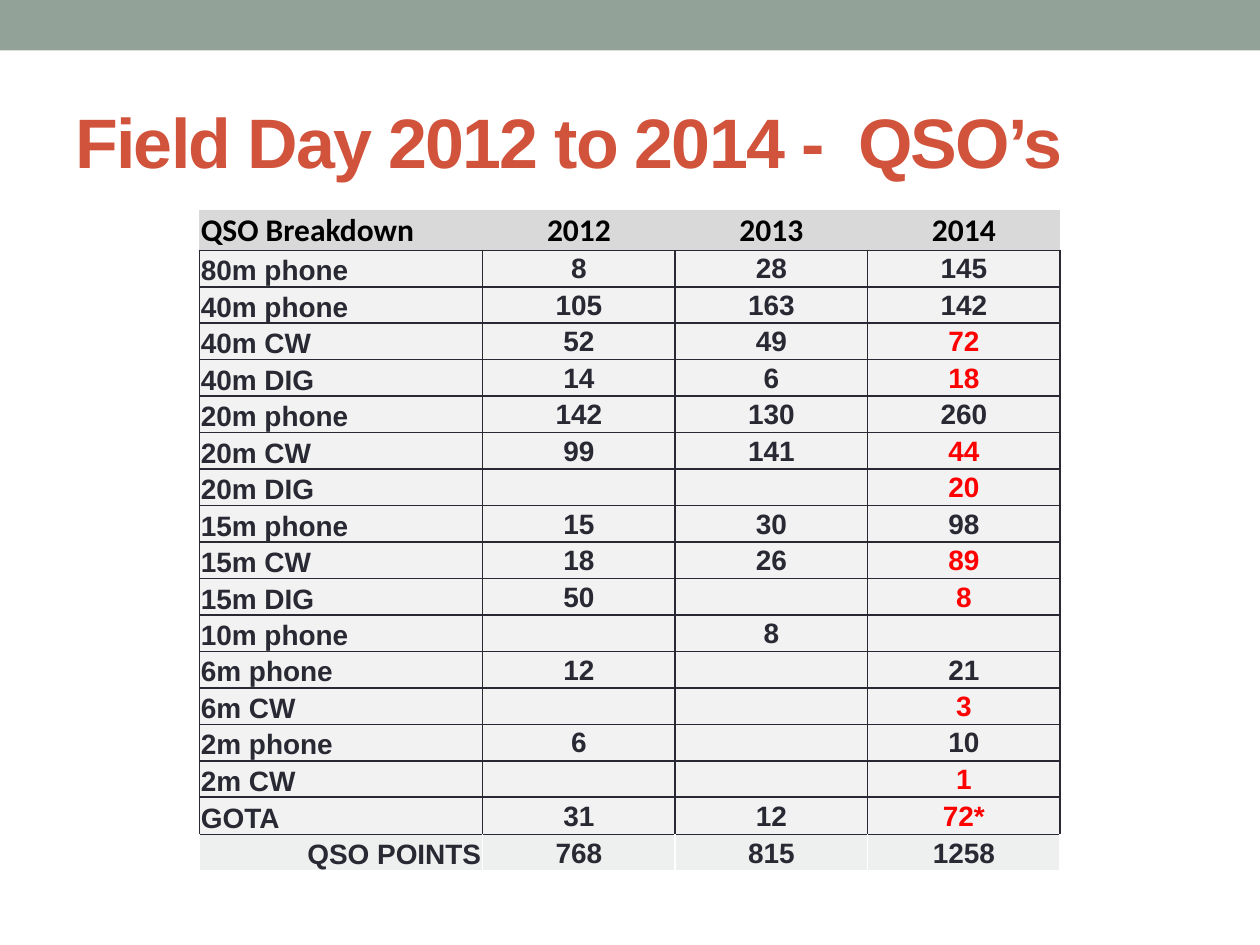
from lxml import etree
from pptx import Presentation
from pptx import util as u
from pptx.dml.color import RGBColor
from pptx.enum import shapes, text
from pptx.oxml.ns import qn

DARK, RED, WHITE = "292934", "FF0000", "FFFFFF"
HEADER = ["QSO Breakdown", "2012", "2013", "2014"]
BANDS = [
    ["80m phone", "8", "28", "145"],
    ["40m phone", "105", "163", "142"],
    ["40m CW", "52", "49", "72"],
    ["40m DIG", "14", "6", "18"],
    ["20m phone", "142", "130", "260"],
    ["20m CW", "99", "141", "44"],
    ["20m DIG", "", "", "20"],
    ["15m phone", "15", "30", "98"],
    ["15m CW", "18", "26", "89"],
    ["15m DIG", "50", "", "8"],
    ["10m phone", "", "8", ""],
    ["6m phone", "12", "", "21"],
    ["6m CW", "", "", "3"],
    ["2m phone", "6", "", "10"],
    ["2m CW", "", "", "1"],
    ["GOTA", "31", "12", "72*"],
]
TOTAL = ["QSO POINTS", "768", "815", "1258"]


def rgb(color):
    return RGBColor.from_string(color)


def add_run(p, words, size, color, name="Arial"):
    r = p.add_run()
    r.text = words
    r.font.size = u.Pt(size)
    r.font.bold = True
    r.font.name = name
    r.font.color.rgb = rgb(color)
    return r


def add_bar(s, width):
    sp = s.shapes.add_shape(shapes.MSO_SHAPE.RECTANGLE, 0, 0, width, u.Cm(1.02))
    sp.shadow.inherit = False
    sp.fill.solid()
    sp.fill.fore_color.rgb = rgb("93A299")
    sp.line.fill.background()


def add_title(s, words):
    sp = s.shapes.add_textbox(u.Cm(1.27), u.Cm(1.47), u.Cm(22.86), u.Cm(2.74))
    tf = sp.text_frame
    tf.word_wrap = True
    tf.vertical_anchor = text.MSO_ANCHOR.MIDDLE
    r = add_run(tf.paragraphs[0], words, 40, "D2533C")
    r.font._element.set("spc", "-100")


def set_borders(cell, colors):
    tc_pr = cell._tc.get_or_add_tcPr()
    for side, color in zip("LRTB", colors):
        ln = etree.SubElement(tc_pr, qn(f"a:ln{side}"), w=str(u.Pt(1)))
        if color:
            fill = etree.SubElement(ln, qn("a:solidFill"))
            etree.SubElement(fill, qn("a:srgbClr"), val=color)
        else:
            etree.SubElement(ln, qn("a:noFill"))


def fill_cell(cell, words, fill, borders, align, anchor, size, color, name="Arial"):
    set_borders(cell, borders)
    cell.fill.solid()
    cell.fill.fore_color.rgb = rgb(fill)
    cell.margin_left = cell.margin_right = cell.margin_top = u.Cm(0.03)
    cell.margin_bottom = 0
    cell.vertical_anchor = anchor
    p = cell.text_frame.paragraphs[0]
    p.alignment = align
    if words:
        add_run(p, words, size, color, name)
    else:
        etree.SubElement(p._p, qn("a:endParaRPr"), sz=str(size * 100))


def add_qso_table(s):
    rows = [HEADER, *BANDS, TOTAL]
    widths = [5.71, 3.88, 3.88, 3.88]
    heights = [0.8] + [0.735] * 15 + [0.75, 0.735]
    frame = s.shapes.add_table(len(rows), len(widths), u.Cm(4.02), u.Cm(4.24),
                               u.Cm(sum(widths)), u.Cm(sum(heights)))
    table = frame.table
    table.first_row = table.horz_banding = False
    for column, width in zip(table.columns, widths):
        column.width = u.Cm(width)
    for row, height in zip(table.rows, heights):
        row.height = u.Cm(height)

    last = len(rows) - 1
    for i, values in enumerate(rows):
        for j, words in enumerate(values):
            align = text.PP_ALIGN.CENTER if j else text.PP_ALIGN.LEFT
            anchor = text.MSO_ANCHOR.MIDDLE if j else text.MSO_ANCHOR.BOTTOM
            cell = table.cell(i, j)
            if i == 0:
                fill_cell(cell, words, "D9D9D9", [None, None, None, DARK], align,
                          text.MSO_ANCHOR.BOTTOM, 18, "000000", "Calibri")
            elif i == last:
                fill_cell(cell, words, "EEF0EF", [WHITE, WHITE, DARK, WHITE],
                          align if j else text.PP_ALIGN.RIGHT, anchor, 16, DARK)
            else:
                is_red = j == 3 and not values[0].endswith("phone")
                fill_cell(cell, words, "F2F2F2", [DARK] * 4, align, anchor, 16,
                          RED if is_red else DARK)


def main():
    prs = Presentation()
    prs.slide_width, prs.slide_height = u.Cm(25.4), u.Cm(19.05)
    s = prs.slides.add_slide(prs.slide_layouts[6])
    add_bar(s, prs.slide_width)
    add_qso_table(s)
    add_title(s, "Field Day 2012 to 2014 -  QSO’s")
    prs.save("out.pptx")


if __name__ == "__main__":
    main()
